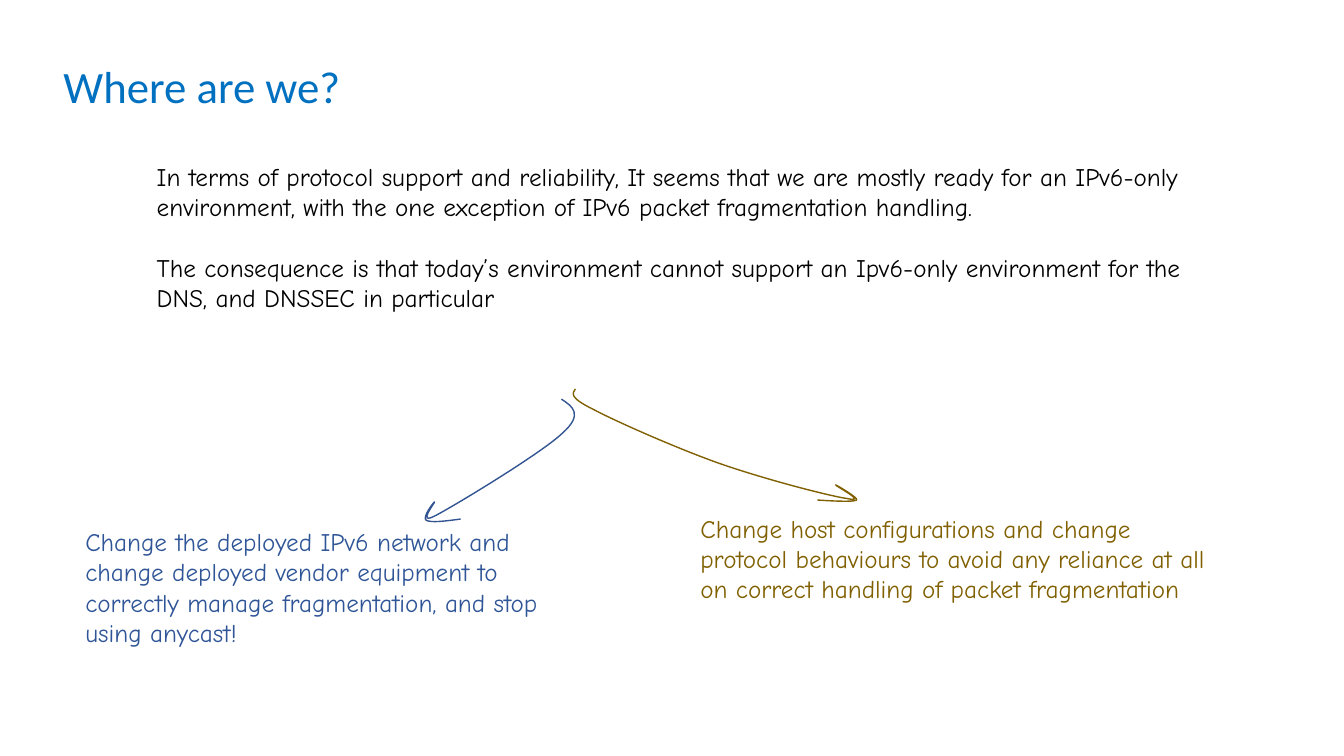
from lxml import etree
from pptx import Presentation
from pptx.dml.color import RGBColor
from pptx.enum.text import MSO_AUTO_SIZE
from pptx.oxml.ns import qn
from pptx.util import Cm, Pt

GROW = MSO_AUTO_SIZE.SHAPE_TO_FIT_TEXT
COLORS = {
    "title": "0070C0",
    "body": "000000",
    "network": "2F5597",
    "network_arrow": "325491",
    "host": "806000",
}

prs = Presentation()
prs.slide_width, prs.slide_height = Cm(33.87), Cm(19.05)
s = prs.slides.add_slide(prs.slide_layouts[6])


def add_text(left, top, width, height, paragraphs, color,
             size=18, font="Comic Neue", wrap=True):
    tf = s.shapes.add_textbox(Cm(left), Cm(top), Cm(width), Cm(height)).text_frame
    tf.word_wrap = wrap
    tf.auto_size = GROW
    for i, text in enumerate(paragraphs):
        p = tf.add_paragraph() if i else tf.paragraphs[0]
        if i:
            p.space_before = Pt(21.7)  # one line of space between paragraphs
        r = p.add_run()
        r.text = text
        r.font.size = Pt(size)
        r.font.name = font
        r.font.color.rgb = RGBColor.from_string(COLORS[color])


def add_curve(left, top, width, height, nodes, color):
    """Draw a start point followed by two controls and an end per curve."""
    builder = s.shapes.build_freeform(Cm(left), Cm(top))
    builder.add_line_segments([(Cm(left + width), Cm(top + height))], close=False)
    sp = builder.convert_to_shape()
    sp.shadow.inherit = False
    sp.fill.background()
    sp.line.color.rgb = RGBColor.from_string(COLORS[color])
    sp.line.width = Pt(1)
    # Replace the box diagonal with cubic curves
    outline = sp._element.find(".//" + qn("a:path"))
    for child in list(outline):
        outline.remove(child)
    for i, (x, y) in enumerate(nodes):
        if i % 3 == 1:
            segment = etree.SubElement(outline, qn("a:cubicBezTo"))
        elif i == 0:
            segment = etree.SubElement(outline, qn("a:moveTo"))
        etree.SubElement(segment, qn("a:pt"),
                         x=str(Cm(x) - Cm(left)), y=str(Cm(y) - Cm(top)))


# Title and main statement
add_text(1.35, 1.35, 9.47, 1.63, ["Where are we?"], "title", 32, "Calibri", False)
add_text(3.7, 3.94, 27.05, 5.64, [
    "In terms of protocol support and reliability, It seems that we are mostly ready "
    "for an IPv6-only environment, with the one exception of IPv6 packet fragmentation handling.",
    "The consequence is that today’s environment cannot support an Ipv6-only environment "
    "for the DNS, and DNSSEC in particular",
], "body")

# Hand-drawn arrows to the two options
add_curve(10.72, 10.06, 3.73, 3.1, [
    (14.15, 10.06),
    (14.43, 10.24), (14.71, 10.44), (14.17, 10.92),
    (13.67, 11.4), (11.53, 12.7), (11, 12.98),
    (10.46, 13.28), (11, 12.62), (10.95, 12.65),
    (10.92, 12.67), (10.64, 13.03), (10.74, 13.11),
    (10.87, 13.18), (11.23, 13.13), (11.61, 13.08),
], "network_arrow")
add_curve(14.45, 9.8, 7.14, 2.82, [
    (14.5, 9.8),
    (14.43, 9.91), (14.33, 10.01), (14.94, 10.31),
    (15.52, 10.62), (17.02, 11.28), (18.08, 11.66),
    (19.15, 12.04), (20.88, 12.5), (21.39, 12.57),
    (21.87, 12.67), (21.01, 12.22), (21.06, 12.22),
    (21.08, 12.22), (21.64, 12.55), (21.59, 12.6),
    (21.51, 12.67), (20.6, 12.6), (20.6, 12.6),
], "host")

# The two options
add_text(1.9, 13.14, 13.31, 3.33, [
    "Change the deployed IPv6 network and change deployed vendor equipment to "
    "correctly manage fragmentation, and stop using anycast!",
], "network")
add_text(17.4, 12.8, 13.31, 3.33, [
    "Change host configurations and change protocol behaviours to avoid any "
    "reliance at all on correct handling of packet fragmentation",
], "host")

prs.save("out.pptx")
